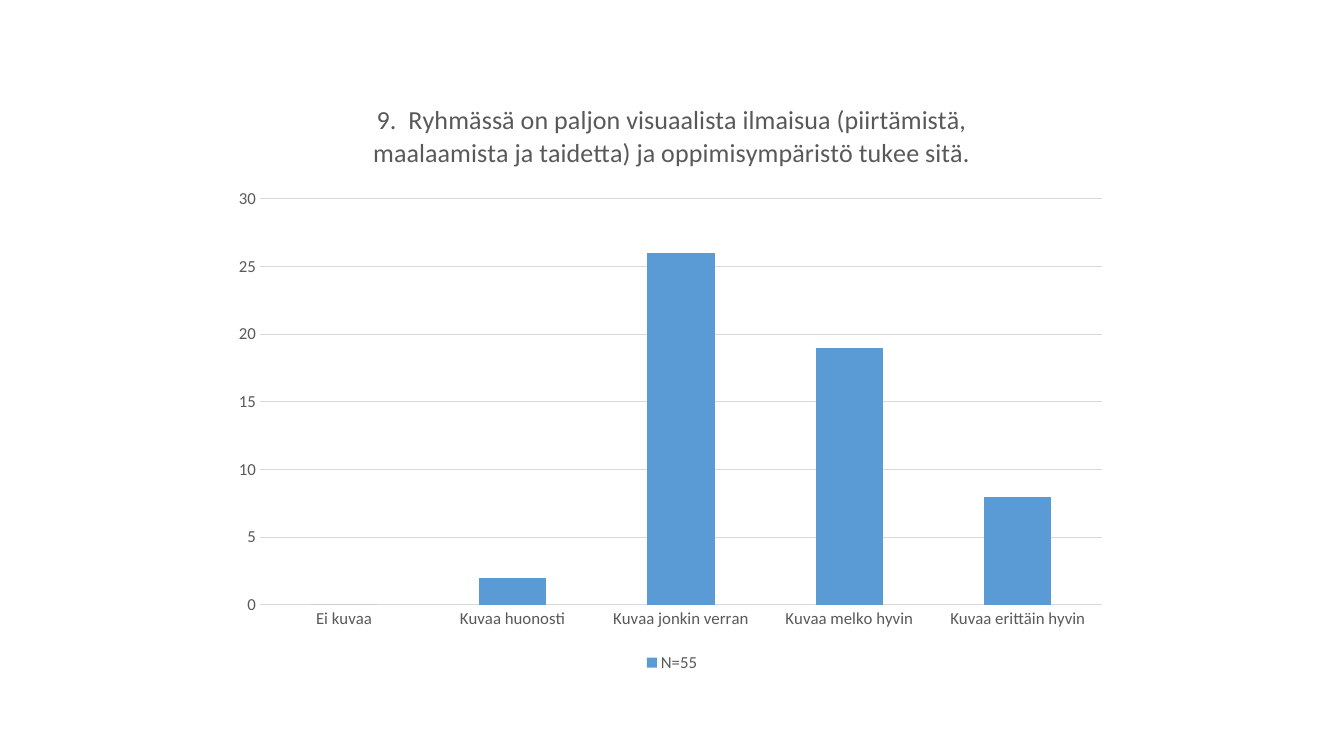
from pptx import Presentation
from pptx import util as u
from pptx.chart.data import CategoryChartData
from pptx.dml.color import RGBColor
from pptx.enum import chart as kinds
from pptx.oxml import parse_xml
from pptx.oxml.ns import nsdecls

COLORS = {"bar": "5B9BD5", "text": "595959", "line": "D9D9D9"}
FONT = "Calibri"
SLIDE_WIDTH, SLIDE_HEIGHT = u.Inches(13.33), u.Inches(7.5)
TITLE = ("9.  Ryhmässä on paljon visuaalista ilmaisua (piirtämistä, "
         "maalaamista ja taidetta) ja oppimisympäristö tukee sitä.")
SERIES = "N=55"
ANSWERS = {
    "Ei kuvaa": 0,
    "Kuvaa huonosti": 2,
    "Kuvaa jonkin verran": 26,
    "Kuvaa melko hyvin": 19,
    "Kuvaa erittäin hyvin": 8,
}


def color(name):
    """Return the named colour."""
    return RGBColor.from_string(COLORS[name])


def format_font(font, size=12, name="text"):
    """Set typeface, size, weight and colour of a font."""
    font.name, font.size, font.bold = FONT, u.Pt(size), False
    font.color.rgb = color(name)


def write_text(frame, content, **font_format):
    """Put formatted text into a text frame."""
    frame.text = content
    format_font(frame.paragraphs[0].runs[0].font, **font_format)


def format_line(line):
    """Draw a thin grey line."""
    line.color.rgb = color("line")
    line.width = u.Pt(0.75)


def format_axis(axis):
    """Set the labels of an axis and hide its tick marks."""
    axis.major_tick_mark = axis.minor_tick_mark = kinds.XL_TICK_MARK.NONE
    format_font(axis.tick_labels.font)


def format_axes(chart):
    """Style both axes and the horizontal gridlines."""
    categories, values = chart.category_axis, chart.value_axis
    format_axis(categories)
    format_line(categories.format.line)
    format_axis(values)
    values.minimum_scale, values.maximum_scale, values.major_unit = 0, 30, 5
    values.format.line.fill.background()
    values.has_major_gridlines = True
    format_line(values.major_gridlines.format.line)


def place_plot(chart, x, y, w, h):
    """Place the inner plot area by shares of the chart's size."""
    sizes = "".join(f'<c:{tag} val="{share}"/>'
                    for tag, share in zip("xywh", (x, y, w, h)))
    layout = parse_xml(
        f'<c:layout {nsdecls("c")}><c:manualLayout><c:layoutTarget val="inner"/>'
        f'<c:xMode val="edge"/><c:yMode val="edge"/>{sizes}'
        '</c:manualLayout></c:layout>')
    plot_area = chart.plots[0]._element.getparent()
    for previous in plot_area.findall(layout.tag):
        plot_area.remove(previous)
    plot_area.insert(0, layout)


def add_answer_chart(slide, left, top, width, height):
    """Add the column chart, placed by shares of the slide's size."""
    data = CategoryChartData()
    data.categories = list(ANSWERS)
    data.add_series(SERIES, list(ANSWERS.values()))
    chart = slide.shapes.add_chart(
        kinds.XL_CHART_TYPE.COLUMN_STACKED,
        int(SLIDE_WIDTH * left), int(SLIDE_HEIGHT * top),
        int(SLIDE_WIDTH * width), int(SLIDE_HEIGHT * height), data).chart
    chart.has_title = True
    write_text(chart.chart_title.text_frame, TITLE, size=18.6)
    chart.chart_title.include_in_layout = False
    chart.has_legend = True
    chart.legend.position = kinds.XL_LEGEND_POSITION.BOTTOM
    chart.legend.include_in_layout = False
    format_font(chart.legend.font)
    plot = chart.plots[0]
    plot.gap_width, plot.overlap, plot.vary_by_categories = 150, 100, False
    fill = plot.series[0].format.fill
    fill.solid()
    fill.fore_color.rgb = color("bar")
    format_axes(chart)
    place_plot(chart, 0.04, 0.2, 0.94, 0.68)


def main():
    """Build and save the slide."""
    presentation = Presentation()
    presentation.slide_width, presentation.slide_height = SLIDE_WIDTH, SLIDE_HEIGHT
    slide = presentation.slides.add_slide(presentation.slide_layouts[6])
    add_answer_chart(slide, left=1 / 6, top=0.105, width=2 / 3, height=0.79)
    presentation.save("out.pptx")


if __name__ == "__main__":
    main()
